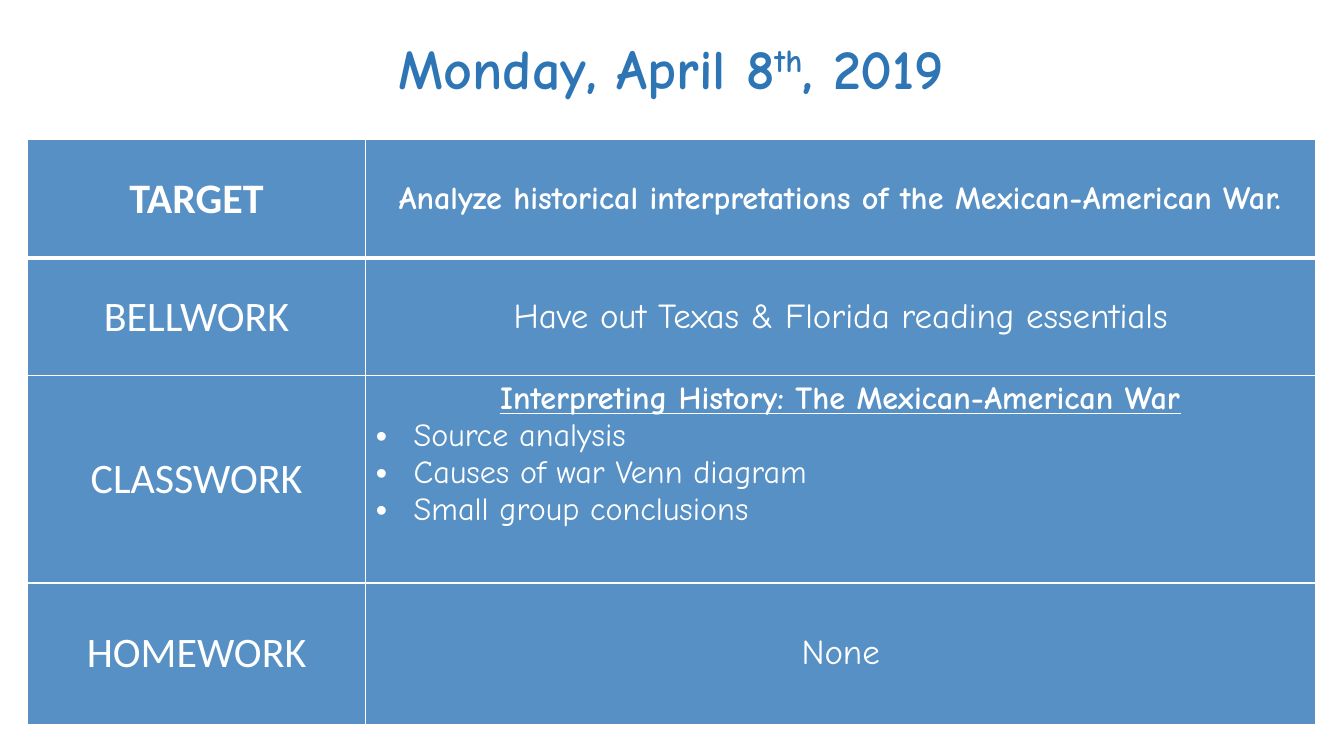
from lxml.etree import SubElement
from pptx import Presentation
from pptx.dml.color import RGBColor
from pptx.enum.text import MSO_ANCHOR, MSO_AUTO_SIZE, PP_ALIGN
from pptx.oxml import parse_xml
from pptx.oxml.ns import nsdecls, qn
from pptx.util import Cm, Pt

BLUE, WHITE = "2E75B6", "FFFFFF"
LABEL_FONT, TEXT_FONT = "Calibri", "Comic Neue"
LEFT, WIDTH = Cm(0.69), Cm(32.46)


def set_fill(target, color, opacity):
    target.fill.solid()
    target.fill.fore_color.rgb = RGBColor.from_string(color)
    properties = target._tc.tcPr if hasattr(target, "_tc") else target._element.spPr
    color_element = properties.find(qn("a:solidFill"))[0]
    SubElement(color_element, qn("a:alpha"), val=str(opacity * 1000))


def add_run(paragraph, text, font, size, color, bold=False, underline=False):
    run = paragraph.add_run()
    run.text = text
    run.font.name = font
    run.font.size = Pt(size)
    run.font.bold = bold
    run.font.underline = underline
    run.font.color.rgb = RGBColor.from_string(color)
    return run


presentation = Presentation()
presentation.slide_width, presentation.slide_height = Cm(33.87), Cm(19.05)
slide = presentation.slides.add_slide(presentation.slide_layouts[5])

# Date
title = slide.shapes.title
title.left, title.top, title.width, title.height = LEFT, Cm(0.41), WIDTH, Cm(2.54)
set_fill(title, WHITE, 65)
title.text_frame.auto_size = MSO_AUTO_SIZE.NONE
title.text_frame.vertical_anchor = MSO_ANCHOR.MIDDLE
date = title.text_frame.paragraphs[0]
date.alignment = PP_ALIGN.CENTER
for text in ("Monday, April 8", "th", ", 2019"):
    run = add_run(date, text, TEXT_FONT, 40, BLUE, bold=True)
    if text == "th":
        run.font._element.set("baseline", "30000")

# Agenda: label, row height in cm, heading size, bold, heading, bullets
agenda = [
    ("TARGET", 3, 23, True,
     "Analyze historical interpretations of the Mexican-American War.", []),
    ("BELLWORK", 2.95, 25, False, "Have out Texas & Florida reading essentials", []),
    ("CLASSWORK", 5.23, 23, True, "Interpreting History: The Mexican-American War",
     ["Source analysis", "Causes of war Venn diagram", "Small group conclusions"]),
    ("HOMEWORK", 3.56, 25, False, "None", []),
]
table_height = Cm(sum(row[1] for row in agenda))
table = slide.shapes.add_table(len(agenda), 2, LEFT, Cm(3.51), WIDTH, table_height).table
table.horz_banding = False
table.columns[0].width, table.columns[1].width = Cm(8.53), Cm(23.93)

for index, (label, height, size, bold, heading, bullets) in enumerate(agenda):
    table.rows[index].height = Cm(height)
    label_cell, text_cell = table.rows[index].cells
    add_run(label_cell.text_frame.paragraphs[0], label, LABEL_FONT, 30, WHITE, bold=index == 0)
    add_run(text_cell.text_frame.paragraphs[0], heading, TEXT_FONT, size, WHITE, bold,
            underline=bool(bullets))

    for cell in (label_cell, text_cell):
        cell.text_frame.paragraphs[0].alignment = PP_ALIGN.CENTER
        cell.vertical_anchor = MSO_ANCHOR.MIDDLE
        set_fill(cell, BLUE, 80)
        for position, side in enumerate("LRTB"):
            thick = (index, side) in ((0, "B"), (1, "T"))
            border = parse_xml(
                f'<a:ln{side} {nsdecls("a")} w="{Pt(3 if thick else 1)}"><a:solidFill>'
                f'<a:srgbClr val="{WHITE}"/></a:solidFill></a:ln{side}>')
            cell._tc.tcPr.insert(position, border)

    if bullets:
        text_cell.vertical_anchor = MSO_ANCHOR.TOP
    for bullet in bullets:
        paragraph = text_cell.text_frame.add_paragraph()
        add_run(paragraph, bullet, TEXT_FONT, size, WHITE)
        properties = paragraph._p.get_or_add_pPr()
        properties.set("marL", str(Cm(0.95)))
        properties.set("indent", str(-Cm(0.95)))
        SubElement(properties, qn("a:buFont"), typeface="Arial")
        SubElement(properties, qn("a:buChar"), char="•")

presentation.save("out.pptx")
